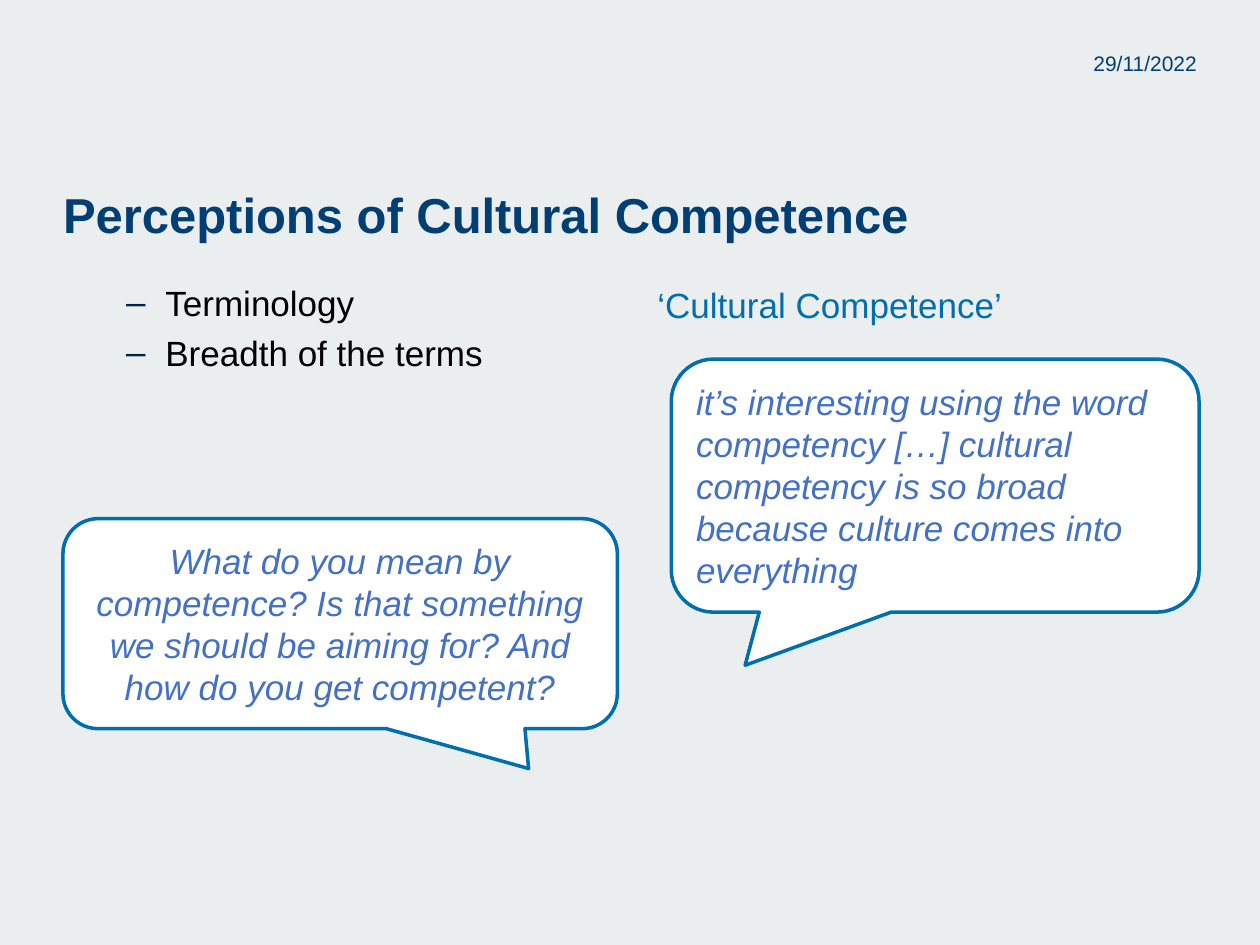
import pptx
import pptx.dml.color
import pptx.enum.shapes
import pptx.enum.text
import pptx.oxml
import pptx.oxml.ns
import pptx.util

Pt = pptx.util.Pt
ALIGN = pptx.enum.text.PP_ALIGN
ANCHOR = pptx.enum.text.MSO_ANCHOR
COLOURS = {
    "background": "EBEEEE",
    "navy": "003E74",
    "bullet": "002548",
    "black": "000000",
    "blue": "006EAF",
    "quote": "4471C4",
    "white": "FFFFFF",
}


class SlideBuilder:
    font_name = "Arial"
    text_size = 20

    def __init__(self, deck):
        self.page = deck.slides.add_slide(deck.slide_layouts[1])
        fill = self.page.background.fill
        fill.solid()
        fill.fore_color.rgb = self.colour("background")

    def colour(self, name):
        return pptx.dml.color.RGBColor.from_string(COLOURS[name])

    def place(self, box, left, top, width, height):
        box.left, box.top = Pt(left), Pt(top)
        box.width, box.height = Pt(width), Pt(height)

    def frame(self, box, anchor, margins=None):
        frame = box.text_frame
        frame.word_wrap = True
        frame.auto_size = pptx.enum.text.MSO_AUTO_SIZE.NONE
        frame.vertical_anchor = anchor
        if margins is not None:
            frame.margin_left = frame.margin_right = Pt(0)
            frame.margin_top, frame.margin_bottom = Pt(margins[0]), Pt(margins[1])
        return frame

    def style(self, para, colour, size=text_size, align=ALIGN.LEFT, bold=False, italic=False):
        para.alignment = align
        para.space_before = Pt(0)
        for span in para.runs:
            span.font.name = self.font_name
            span.font.size = Pt(size)
            span.font.bold = bold
            span.font.italic = italic
            span.font.color.rgb = self.colour(colour)

    def title(self, text, *bounds):
        box = self.page.shapes.title
        self.place(box, *bounds)
        frame = self.frame(box, ANCHOR.MIDDLE, (3.6, 0))
        frame.text = text
        self.style(frame.paragraphs[0], "navy", 28, bold=True)

    def bullets(self, items, *bounds):
        box = self.page.placeholders[1]
        self.place(box, *bounds)
        frame = self.frame(box, ANCHOR.TOP, (0, 0))
        frame.text = "\n".join(items)
        for index, para in enumerate(frame.paragraphs):
            para.level = 1
            self.dash(para)
            self.style(para, "black")
            para.space_before = Pt(5 if index else 0)

    def dash(self, para):
        properties = para._p.get_or_add_pPr()
        properties.set("marL", str(Pt(58.5)))
        properties.set("indent", str(Pt(-22.5)))
        namespace = pptx.oxml.ns.nsdecls("a")
        for markup in (
            f'<a:buClr {namespace}><a:srgbClr val="{COLOURS["bullet"]}"/></a:buClr>',
            f'<a:buFont {namespace} typeface="{self.font_name}"/>',
            f'<a:buChar {namespace} char="–"/>',
        ):
            properties.append(pptx.oxml.parse_xml(markup))

    def label(self, text, bounds, colour, margins=None, **style):
        box = self.page.shapes.add_textbox(*map(Pt, bounds))
        frame = self.frame(box, ANCHOR.TOP, margins)
        frame.text = text
        self.style(frame.paragraphs[0], colour, **style)

    def callout(self, text, bounds, tail, align):
        kind = pptx.enum.shapes.MSO_SHAPE.ROUNDED_RECTANGULAR_CALLOUT
        box = self.page.shapes.add_shape(kind, *map(Pt, bounds))
        box.adjustments[0], box.adjustments[1] = tail
        box.shadow.inherit = False
        box.fill.solid()
        box.fill.fore_color.rgb = self.colour("white")
        box.line.color.rgb = self.colour("blue")
        box.line.width = Pt(2)
        frame = self.frame(box, ANCHOR.MIDDLE)
        frame.text = text
        self.style(frame.paragraphs[0], "quote", align=align, italic=True)


def main():
    deck = pptx.Presentation()
    deck.slide_width, deck.slide_height = Pt(720), Pt(540)
    slide = SlideBuilder(deck)
    slide.title("Perceptions of Cultural Competence", 36, 100, 648, 40.3)
    slide.label("29/11/2022", (558.7, 29, 125.3, 26), "navy", (0, 0), size=12, align=ALIGN.RIGHT)
    slide.bullets(["Terminology", "Breadth of the terms"], 36, 160.6, 648, 287.3)
    slide.label("‘Cultural Competence’", (368.6, 158.4, 225.4, 55.4), "blue")
    slide.callout(
        "it’s interesting using the word competency […] cultural competency "
        "is so broad because culture comes into everything",
        (383.6, 205.2, 301.6, 144.6), (-0.36, 0.71), ALIGN.LEFT,
    )
    slide.callout(
        "What do you mean by competence? Is that something we should be "
        "aiming for? And how do you get competent?",
        (36, 296.4, 316.8, 120), (0.34, 0.69), ALIGN.CENTER,
    )
    deck.save("out.pptx")


if __name__ == "__main__":
    main()
